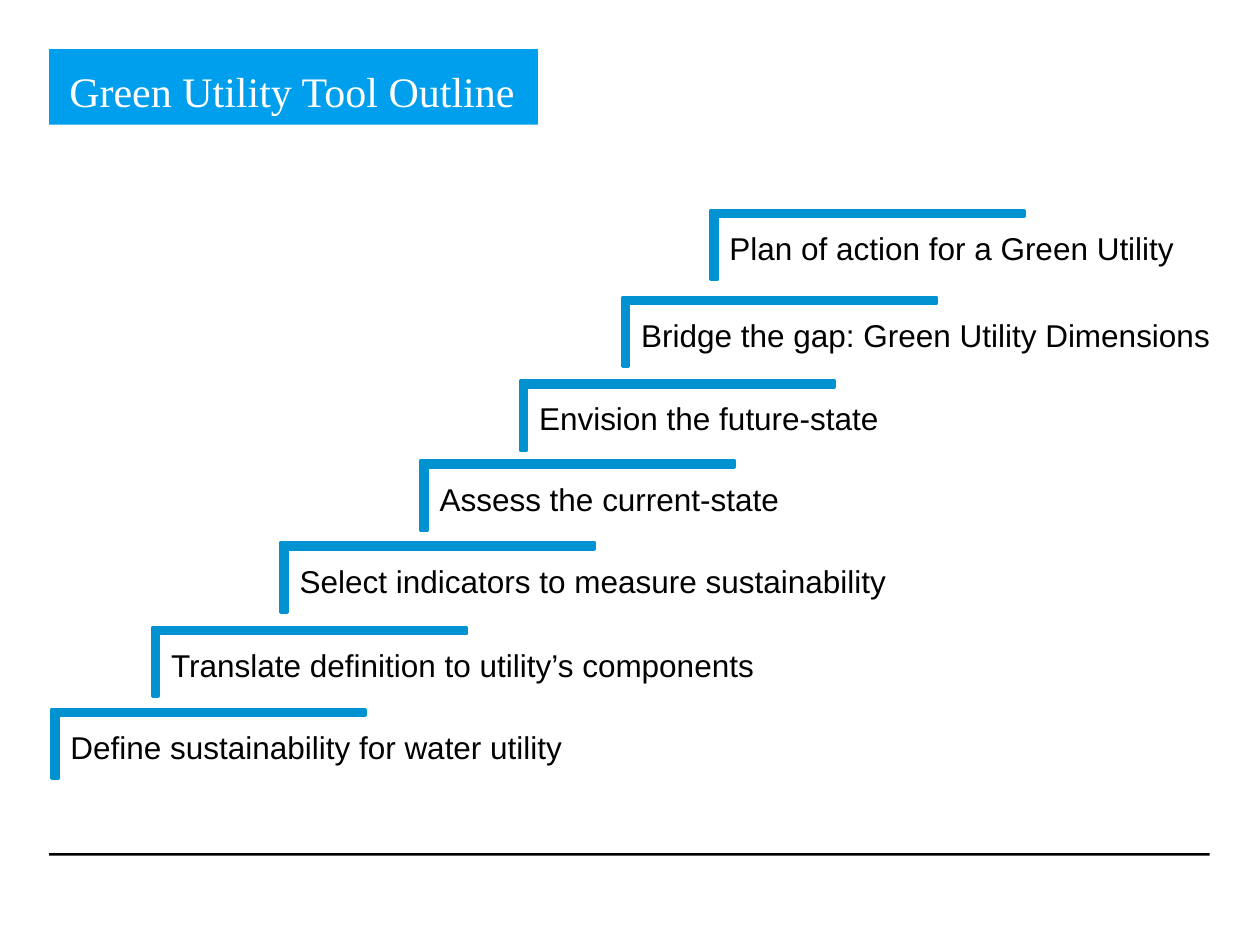
from pptx import Presentation
from pptx.dml.color import RGBColor
from pptx.enum.shapes import MSO_SHAPE
from pptx.enum.text import PP_ALIGN
from pptx.util import Inches, Pt

COLORS = {
    "black": "000000",
    "white": "FFFFFF",
    "title": "009FEE",
    "step": "0092D0",
    "edge": "0092D1",
}

# Left and top of each step's corner, width of its label, label
STEPS = [
    (0.41, 5.63, 4.25, "Define sustainability for water utility"),
    (1.21, 4.98, 5.15, "Translate definition to utility’s components"),
    (2.23, 4.31, 4.97, "Select indicators to measure sustainability"),
    (3.34, 3.66, 4.25, "Assess the current-state"),
    (4.13, 3.02, 4.6, "Envision the future-state"),
    (4.94, 2.36, 4.97, "Bridge the gap: Green Utility Dimensions"),
    (5.64, 1.67, 3.8, "Plan of action for a Green Utility"),
]
BAR = 0.05
RISE = 0.55
TREAD = 2.49


def color(name):
    return RGBColor.from_string(COLORS[name])


def write(frame, text, size=18, font="Arial", fill="black",
          insets=(0.1, 0.05, 0.1, 0.05)):
    """Fill a text frame; insets are left, top, right, bottom in inches."""
    left, top, right, bottom = map(Inches, insets)
    frame.margin_left, frame.margin_top = left, top
    frame.margin_right, frame.margin_bottom = right, bottom
    frame.word_wrap = True
    para = frame.paragraphs[0]
    para.alignment = PP_ALIGN.LEFT
    run = para.add_run()
    run.text = text
    run.font.size = Pt(size)
    run.font.name = font
    run.font.color.rgb = color(fill)


class Painter:
    def __init__(self, slide, fill="step", edge="edge", width=2):
        self.slide = slide
        self.fill = fill
        self.edge = edge
        self.width = width

    def rect(self, left, top, width, height, fill, edge=None):
        box = self.slide.shapes.add_shape(
            MSO_SHAPE.RECTANGLE, *map(Inches, (left, top, width, height)))
        box.shadow.inherit = False
        box.fill.solid()
        box.fill.fore_color.rgb = color(fill)
        if edge:
            box.line.color.rgb = color(edge)
            box.line.width = Pt(self.width)
        else:
            box.line.fill.background()
        return box

    def label(self, left, top, width, height, text, **style):
        box = self.slide.shapes.add_textbox(
            *map(Inches, (left, top, width, height)))
        write(box.text_frame, text, **style)
        return box

    def title(self, left, top, width, height, text):
        box = self.label(left, top, width, height, text, size=24,
                         font="Times New Roman", fill="white",
                         insets=(0.16, 0.13, 0.1, 0.07))
        box.fill.solid()
        box.fill.fore_color.rgb = color("title")

    def step(self, left, top, width, text):
        """Draw a corner of two bars with its label inside."""
        self.rect(left, top, BAR, RISE, self.fill, self.edge)
        self.rect(left, top, TREAD, BAR, self.fill, self.edge)
        self.label(left + BAR, top + 0.1, width, 0.4, text)


def main():
    deck = Presentation()
    deck.slide_width = Inches(10)
    deck.slide_height = Inches(7.5)
    paint = Painter(deck.slides.add_slide(deck.slide_layouts[6]))

    paint.rect(0.39, 6.77, 9.21, 0.02, "black")
    paint.title(0.39, 0.39, 3.88, 0.6, "Green Utility Tool Outline")
    for step in STEPS:
        paint.step(*step)

    deck.save("out.pptx")


if __name__ == "__main__":
    main()
